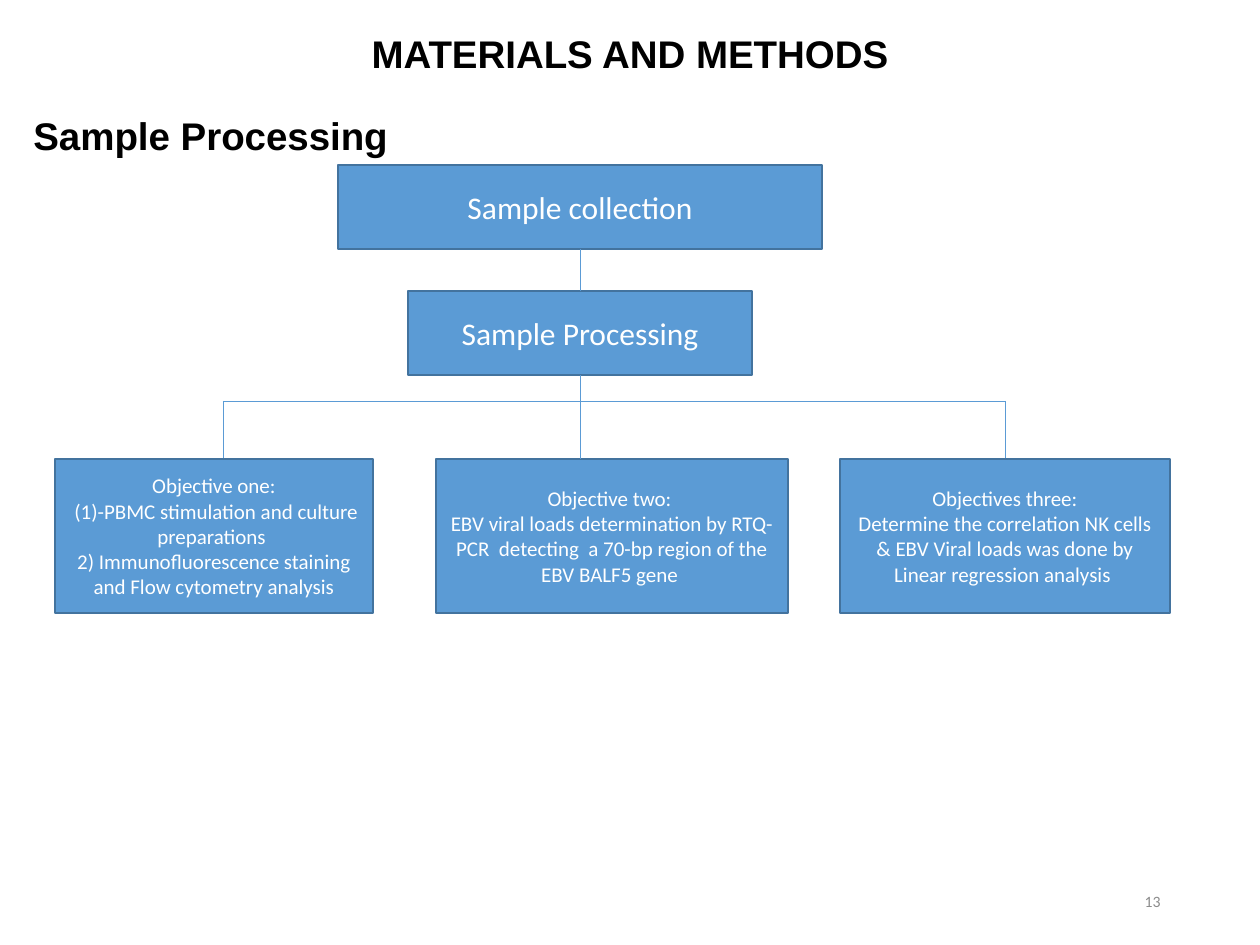
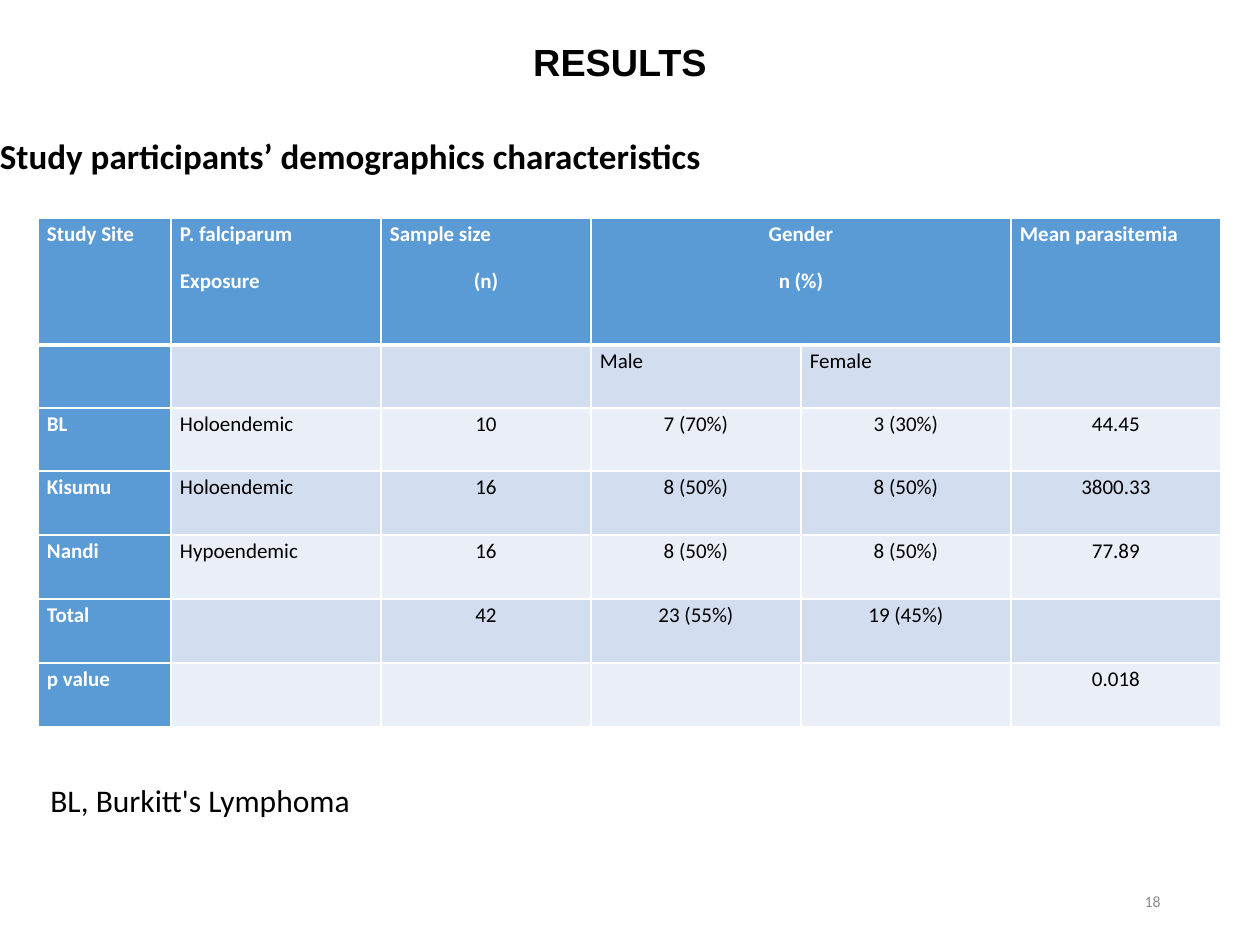
import pptx
import pptx.dml.color
import pptx.enum.shapes
import pptx.enum.text
import pptx.oxml
import pptx.oxml.ns
import pptx.util

RGB = pptx.dml.color.RGBColor
BLUE = RGB(0x5B, 0x9B, 0xD5)
EDGE = RGB(0x43, 0x73, 0x9E)
BAND_DARK = RGB(0xD2, 0xDE, 0xEF)
BAND_LIGHT = RGB(0xEA, 0xEF, 0xF7)
WHITE = RGB(0xFF, 0xFF, 0xFF)
BLACK = RGB(0, 0, 0)
GREY = RGB(0x8C, 0x8C, 0x8C)

ALIGN = pptx.enum.text.PP_ALIGN
ANCHOR = pptx.enum.text.MSO_ANCHOR
TOP, BOTTOM = 0, 2

OBJECTIVES = [
    (55, 318, ["Objective one:",
               " (1)-PBMC stimulation and culture preparations ",
               "2) Immunofluorescence staining and Flow cytometry analysis"]),
    (436, 352, ["Objective two: ",
                "EBV viral loads determination by RTQ-PCR  detecting  a 70-bp region "
                "of the EBV BALF5 gene "]),
    (840, 330, ["Objectives three:",
                "Determine the correlation NK cells & EBV Viral loads was done by "
                "Linear regression analysis "]),
]

DEMOGRAPHICS = [
    ["Study Site", "P. falciparum\nExposure", "Sample size\n(n)", "Gender\nn (%)", "",
     "Mean parasitemia"],
    ["", "", "", "Male", "Female", ""],
    ["BL", "Holoendemic", "10", "7 (70%)", "3 (30%)", "44.45"],
    ["Kisumu", "Holoendemic", "16", "8 (50%)", "8 (50%)", "3800.33"],
    ["Nandi", "Hypoendemic", "16", "8 (50%)", "8 (50%)", "77.89"],
    ["Total", "", "42", "23 (55%)", "19 (45%)", ""],
    ["p value", "", "", "", "", "0.018"],
]
COLUMN_WIDTHS = [133] + [210] * 5
ROW_HEIGHTS = [127, 63, 63] + [64] * 4


def px(n):
    """Turn px into EMU."""
    return pptx.util.Emu(round(n * 914400 / 126))


def write(tf, lines, size, color, font="Calibri", bold=False, align=ALIGN.LEFT, spacing=None):
    """Fill a text frame with one paragraph per line in one style."""
    tf.text = "\n".join(lines)
    for p in tf.paragraphs:
        p.alignment = align
        if spacing:
            p.line_spacing = spacing
        for r in p.runs:
            r.font.name = font
            r.font.size = pptx.util.Pt(size)
            r.font.bold = bold
            r.font.color.rgb = color


def add_text(s, box, text, size, color=BLACK, anchor=ANCHOR.TOP, wrap=True, **style):
    """Add a text box and return its frame."""
    tf = s.shapes.add_textbox(*map(px, box)).text_frame
    tf.word_wrap = wrap
    tf.vertical_anchor = anchor
    write(tf, [text], size, color, **style)
    return tf


def add_heading(s, box, text, size=22, **style):
    """Add a bold Arial heading."""
    return add_text(s, box, text, size, font="Arial", bold=True, spacing=0.9, **style)


def add_number(s, number):
    """Add the slide number at the lower right."""
    add_text(s, (890, 876, 283, 50), number, 9, GREY, ANCHOR.MIDDLE, align=ALIGN.RIGHT)


def add_process(s, box, lines, size):
    """Add a process box with centred white text."""
    kind = pptx.enum.shapes.MSO_SHAPE.FLOWCHART_PROCESS
    sp = s.shapes.add_shape(kind, *map(px, box))
    sp.shadow.inherit = False
    sp.fill.solid()
    sp.fill.fore_color.rgb = BLUE
    sp.line.color.rgb = EDGE
    sp.line.width = pptx.util.Pt(1)
    sp.text_frame.word_wrap = True
    sp.text_frame.vertical_anchor = ANCHOR.MIDDLE
    write(sp.text_frame, lines, size, WHITE, align=ALIGN.CENTER)
    return sp


def add_line(s, x1, y1, x2, y2):
    """Add a thin blue straight connector."""
    kind = pptx.enum.shapes.MSO_CONNECTOR.STRAIGHT
    c = s.shapes.add_connector(kind, px(x1), px(y1), px(x2), px(y2))
    c.line.color.rgb = BLUE
    c.line.width = pptx.util.Pt(0.5)
    pptx.oxml.ns.qn("a:effectLst")
    c._element.spPr.append(pptx.oxml.parse_xml(
        f'<a:effectLst {pptx.oxml.ns.nsdecls("a")}/>'))
    return c


def add_flowchart(s, left, top):
    """Draw the sample flow from collection to the three objectives."""
    middle, rail, objectives_top = left + 580, top + 236, top + 294
    rail_left, rail_right = left + 223, left + 1005
    add_line(s, rail_left, rail, rail_right, rail)
    for x in (rail_left, rail_right):
        add_line(s, x, rail, x, objectives_top)
    collection = add_process(s, (middle - 242, top, 484, 84), ["Sample collection"], 18)
    processing = add_process(s, (middle - 172, top + 126, 344, 84), ["Sample Processing"], 18)
    for x, width, lines in OBJECTIVES:
        add_process(s, (left + x, objectives_top, width, 154), lines, 12)
    link = add_line(s, middle, top + 84, middle, top + 126)
    link.begin_connect(collection, BOTTOM)
    link.end_connect(processing, TOP)
    stem = add_line(s, middle, top + 210, middle, objectives_top)
    stem.begin_connect(processing, BOTTOM)


def set_borders(cell, **widths):
    """Give a cell white borders of the given widths in points."""
    tcPr = cell._tc.get_or_add_tcPr()
    for i, side in enumerate("LRTB"):
        width = pptx.util.Pt(widths.get(side, 1))
        tcPr.insert(i, pptx.oxml.parse_xml(
            f'<a:ln{side} {pptx.oxml.ns.nsdecls("a")} w="{width}">'
            f'<a:solidFill><a:srgbClr val="{WHITE}"/></a:solidFill></a:ln{side}>'))


def style_cell(cell, text, row, col):
    """Fill, border and write one table cell."""
    strong = row == 0 or col == 0
    cell.fill.solid()
    cell.fill.fore_color.rgb = BLUE if strong else (BAND_DARK if row % 2 else BAND_LIGHT)
    set_borders(cell, T=3 if row == 1 else 1, B=3 if row == 0 else 1)
    if not text:
        return
    cell.margin_left = cell.margin_right = px(9)
    cell.margin_top = cell.margin_bottom = 0
    centred = row > 1 and col > 1 or text.startswith("Gender")
    write(cell.text_frame, text.split("\n"), 12, WHITE if strong else BLACK, bold=strong,
          align=ALIGN.CENTER if centred else ALIGN.LEFT, spacing=1.15)
    for p in cell.text_frame.paragraphs:
        p.space_after = pptx.util.Pt(10)
        if p.text == "(n)":
            p.alignment = ALIGN.CENTER


def add_demographics(s, left, top):
    """Add the table of participants by study site."""
    box = (left, top, sum(COLUMN_WIDTHS), sum(ROW_HEIGHTS))
    table = s.shapes.add_table(len(ROW_HEIGHTS), len(COLUMN_WIDTHS), *map(px, box)).table
    for column, width in zip(table.columns, COLUMN_WIDTHS):
        column.width = px(width)
    for row, height in zip(table.rows, ROW_HEIGHTS):
        row.height = px(height)
    for i, texts in enumerate(DEMOGRAPHICS):
        for j, text in enumerate(texts):
            style_cell(table.cell(i, j), text, i, j)
    table.cell(0, 3).merge(table.cell(0, 4))


def build_methods(s):
    """Build the materials and methods slide."""
    add_heading(s, (0, 0, 1260, 112), "MATERIALS AND METHODS",
                anchor=ANCHOR.MIDDLE, align=ALIGN.CENTER)
    add_heading(s, (21, 111, 1202, 764), "Sample Processing")
    add_flowchart(s, 0, 165)
    add_number(s, "13")


def build_results(s):
    """Build the results slide."""
    tf = add_heading(s, (0, 42, 1240, 87), "RESULTS", 21.6, align=ALIGN.CENTER)
    tf.margin_top = px(2)
    add_demographics(s, 38, 218)
    tf = add_text(s, (0, 68, 1245, 150), "Study participants’ demographics characteristics",
                  20, anchor=ANCHOR.MIDDLE, bold=True)
    tf.margin_left = tf.margin_right = 0
    tf.margin_top, tf.margin_bottom = px(29), px(5)
    add_number(s, "18")
    add_text(s, (38, 775, 329, 50), "BL, Burkitt's Lymphoma", 18, wrap=False)


def main():
    """Build both slides and save them."""
    prs = pptx.Presentation()
    prs.slide_width, prs.slide_height = px(1260), px(945)
    for build in (build_methods, build_results):
        build(prs.slides.add_slide(prs.slide_layouts[6]))
    prs.save("out.pptx")


if __name__ == "__main__":
    main()
